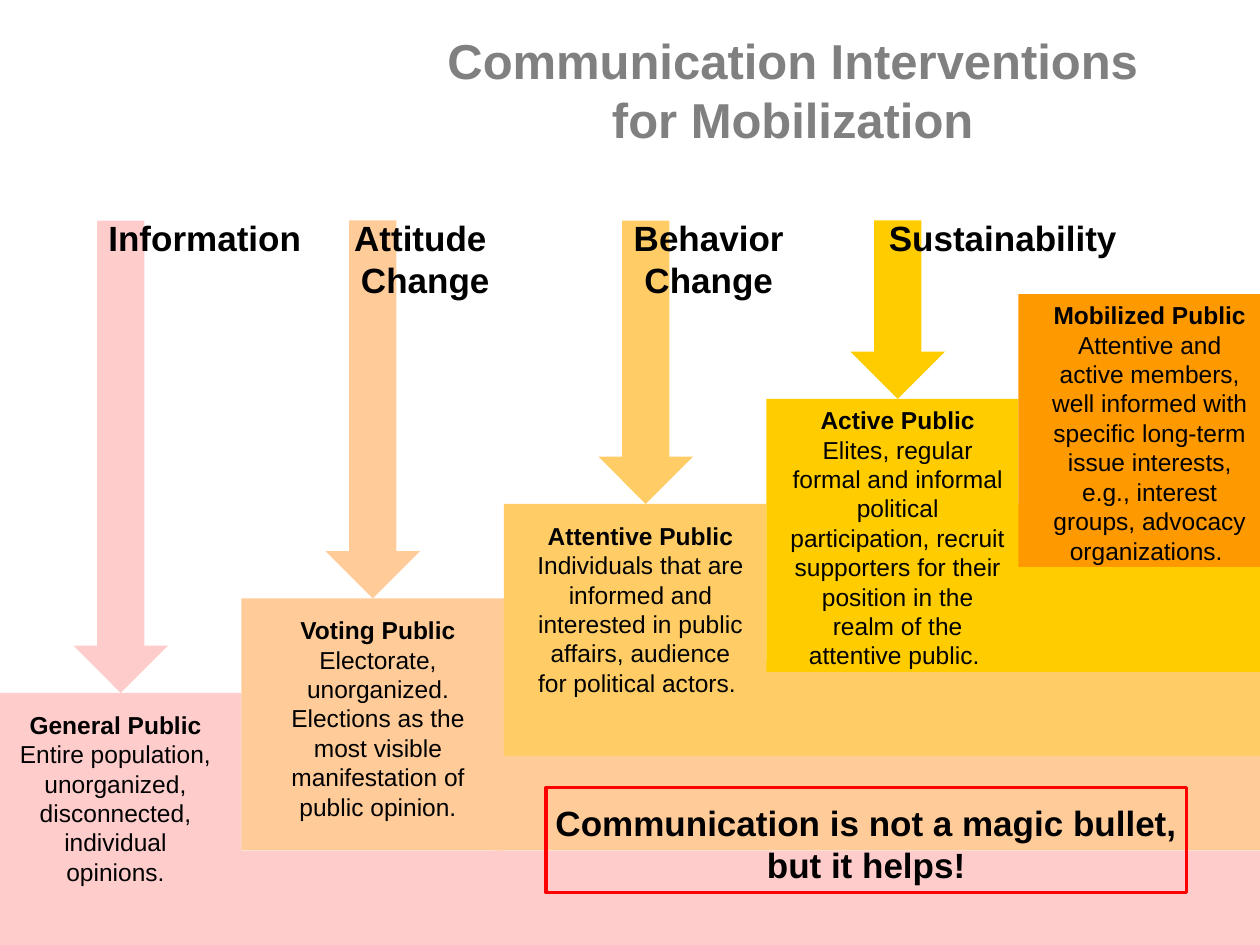
from dataclasses import dataclass
from typing import NamedTuple, Optional

from pptx import Presentation
from pptx.dml.color import RGBColor
from pptx.enum.shapes import MSO_SHAPE as Shape
from pptx.enum.text import MSO_ANCHOR as Anchor, MSO_AUTO_SIZE as AutoSize, PP_ALIGN as Align
from pptx.util import Pt


@dataclass(frozen=True)
class Theme:
    """Colours, font and type sizes of the slide."""
    font: str = "Arial"
    title: str = "808080"
    text: str = "000000"
    frame: str = "FF0000"
    general: str = "FFCCCC"
    voting: str = "FFCC99"
    attentive: str = "FFCC66"
    active: str = "FFCC00"
    mobilized: str = "FF9900"
    title_size: int = 28
    label_size: int = 20
    body_size: int = 14


class Intervention(NamedTuple):
    """An arrow down to a step, with its label."""
    label: str
    arrow_left: float
    label_left: float
    step_top: float
    color: str


class Public(NamedTuple):
    """A step of the staircase: block, text area and strip to the right edge."""
    name: str
    description: str
    block: tuple
    text_area: tuple
    strip: Optional[tuple]
    color: str


THEME = Theme()
WIDTH, HEIGHT = 720, 540
ARROW_TOP, ARROW_WIDTH = 126, 54
LABEL_TOP, LABEL_WIDTH = 120, 162

INTERVENTIONS = [
    Intervention("Information", 42, 36, 396, THEME.general),
    Intervention("Attitude \nChange", 186, 162, 342, THEME.voting),
    Intervention("Behavior Change", 342, 324, 288, THEME.attentive),
    Intervention("Sustainability", 486, 492, 228, THEME.active),
]

PUBLICS = [
    Public("General Public",
           "Entire population, unorganized, disconnected, individual opinions.",
           (0, 396, 138, 144), (0, 402, 132, 109), (132, 486, 588, 54), THEME.general),
    Public("Voting Public",
           "Electorate, unorganized. Elections as the most visible manifestation "
           "of public opinion.",
           (138, 342, 150, 144), (150, 348, 132, 126), (282, 432, 438, 54), THEME.voting),
    Public("Attentive Public",
           "Individuals that are informed and interested in public affairs, "
           "audience for political actors. ",
           (288, 288, 150, 144), (300, 294, 132, 109), (420, 378, 300, 54), THEME.attentive),
    Public("Active Public",
           "Elites, regular formal and informal political participation, recruit "
           "supporters for their position in the realm of the attentive public. ",
           (438, 228, 144, 156), (444, 228, 138, 160), (576, 288, 144, 96), THEME.active),
    Public("Mobilized Public",
           "Attentive and active members, well informed with specific long-term "
           "issue interests, e.g., interest groups, advocacy organizations. ",
           (582, 168, 138, 156), (594, 168, 126, 160), None, THEME.mobilized),
]


def points(area):
    """Turn a left, top, width, height tuple into lengths."""
    return [Pt(value) for value in area]


def write_line(para, text, size, bold=True, color=THEME.text):
    """Write one centred paragraph in the theme font."""
    para.text = text
    para.alignment = Align.CENTER
    formats = {"name": THEME.font, "size": Pt(size), "bold": bold}
    for span in para.runs:
        for name, value in formats.items():
            setattr(span.font, name, value)
        span.font.color.rgb = RGBColor.from_string(color)


def add_title(page, text, area):
    """Fill and place the title placeholder."""
    title = page.shapes.title
    title.left, title.top, title.width, title.height = points(area)
    frame = title.text_frame
    formats = {"word_wrap": True, "auto_size": AutoSize.NONE, "vertical_anchor": Anchor.MIDDLE}
    for name, value in formats.items():
        setattr(frame, name, value)
    write_line(frame.paragraphs[0], text, THEME.title_size, color=THEME.title)


def add_text(page, area, heading, size, body=None):
    """Add a wrapped text box with a bold heading and an optional plain body."""
    frame = page.shapes.add_textbox(*points(area)).text_frame
    frame.word_wrap = True
    frame.auto_size = AutoSize.SHAPE_TO_FIT_TEXT
    write_line(frame.paragraphs[0], heading, size)
    if body:
        write_line(frame.add_paragraph(), body, size, bold=False)


def add_filled(page, kind, area, color):
    """Add a flat preset shape without outline."""
    shape = page.shapes.add_shape(kind, *points(area))
    shape.shadow.inherit = False
    shape.fill.solid()
    shape.fill.fore_color.rgb = RGBColor.from_string(color)
    shape.line.fill.background()


def add_frame(page, area):
    """Add an outlined rectangle without fill."""
    shape = page.shapes.add_shape(Shape.RECTANGLE, *points(area))
    shape.shadow.inherit = False
    shape.fill.background()
    shape.line.color.rgb = RGBColor.from_string(THEME.frame)
    shape.line.width = Pt(2)


def add_intervention(page, item):
    """Add an arrow that ends on its step, and the label over it."""
    arrow = (item.arrow_left, ARROW_TOP, ARROW_WIDTH, item.step_top - ARROW_TOP)
    add_filled(page, Shape.DOWN_ARROW, arrow, item.color)
    lines = 1 if len(item.label) < 15 else 2
    label = (item.label_left, LABEL_TOP, LABEL_WIDTH, 8 + 24 * lines)
    add_text(page, label, item.label, THEME.label_size)


def add_public(page, item):
    """Add one step with its strip and text."""
    if item.strip:
        add_filled(page, Shape.RECTANGLE, item.strip, item.color)
    add_filled(page, Shape.RECTANGLE, item.block, item.color)
    add_text(page, item.text_area, item.name, THEME.body_size, item.description)


def main():
    """Build the slide and save it."""
    deck = Presentation()
    deck.slide_width, deck.slide_height = Pt(WIDTH), Pt(HEIGHT)
    page = deck.slides.add_slide(deck.slide_layouts[5])
    add_title(page, "Communication Interventions for Mobilization", (240, 30, 426, 42))
    for item in INTERVENTIONS:
        add_intervention(page, item)
    for item in PUBLICS:
        add_public(page, item)
    add_text(page, (306, 454.5, 378, 55.5),
             "Communication is not a magic bullet, but it helps!", THEME.label_size)
    add_frame(page, (312, 450, 366, 60))
    deck.save("out.pptx")


if __name__ == "__main__":
    main()
